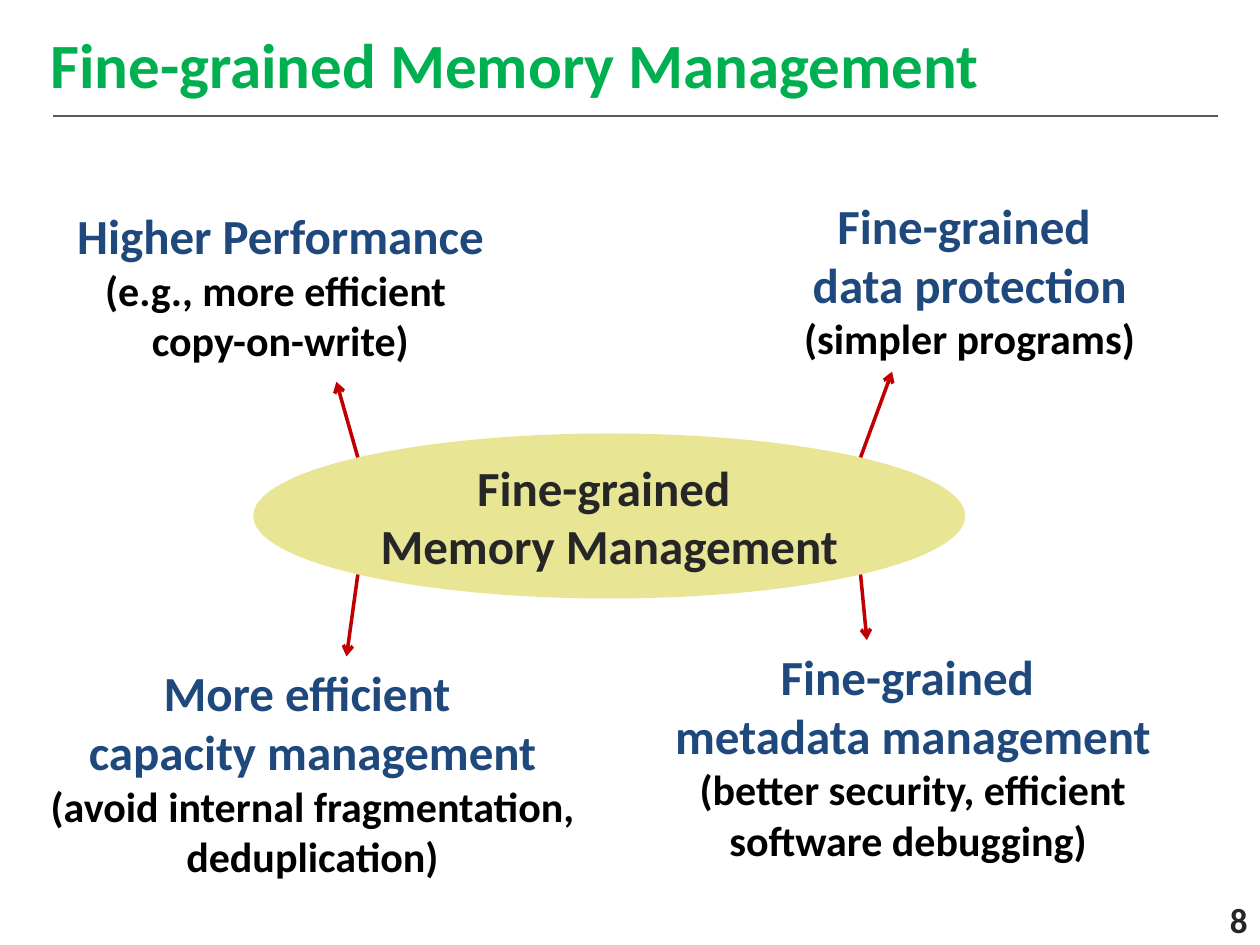
from pptx import Presentation
from pptx.dml.color import RGBColor
from pptx.enum.shapes import MSO_CONNECTOR, MSO_SHAPE
from pptx.enum.text import MSO_ANCHOR, PP_ALIGN
from pptx.oxml.ns import qn
from pptx.util import Inches, Pt
from lxml.etree import SubElement

THEME = {
    "font": "Calibri",
    "title": (36, "00B050"),
    "benefit": (28, "1F497D"),
    "detail": (24, "000000"),
    "hub": (28, "262626"),
    "number": (20, "262626"),
    "hub_fill": "E8E595",
    "rule": "595959",
    "arrow": "C00000",
}

# Grid of 100 columns by 75 rows
prs = Presentation()
prs.slide_width, prs.slide_height = Inches(10), Inches(7.5)
COL, ROW = prs.slide_width / 100, prs.slide_height / 75
slide = prs.slides.add_slide(prs.slide_layouts[6])


def grid(left, top, *size):
    """Turn columns and rows into slide lengths."""
    return [round(n * unit) for n, unit in zip((left, top, *size), (COL, ROW) * 2)]


def write(shape, lines, align, anchor):
    """Fill a shape with one paragraph for each (style, text) line."""
    frame = shape.text_frame
    frame.word_wrap, frame.vertical_anchor = True, anchor
    for i, (style, text) in enumerate(lines):
        paragraph = frame.add_paragraph() if i else frame.paragraphs[0]
        paragraph.alignment = align
        run = paragraph.add_run()
        run.text = text
        size, color = THEME[style]
        run.font.name, run.font.size, run.font.bold = THEME["font"], Pt(size), True
        run.font.color.rgb = RGBColor.from_string(color)


# Title and slide number
title = slide.shapes.add_textbox(*grid(0, 0, 100, 10))
title.text_frame.margin_left = round(4 * COL)
write(title, [("title", "Fine-grained Memory Management")], PP_ALIGN.LEFT, MSO_ANCHOR.MIDDLE)
number = slide.shapes.add_textbox(*grid(91.7, 71, 8.3, 4))
write(number, [("number", "8")], PP_ALIGN.RIGHT, MSO_ANCHOR.MIDDLE)

# Central idea
hub = slide.shapes.add_shape(MSO_SHAPE.OVAL, *grid(20.1, 34.4, 56.5, 13.1))
hub.shadow.inherit = False
hub.fill.solid()
hub.fill.fore_color.rgb = RGBColor.from_string(THEME["hub_fill"])
hub.line.fill.background()
write(hub, [("hub", "Fine-grained "), ("hub", "Memory Management")],
      PP_ALIGN.CENTER, MSO_ANCHOR.MIDDLE)

# Benefits around it: text box and its lines
benefits = [
    ((59.7, 15, 34.5, 14.5), [("benefit", "Fine-grained "), ("benefit", "data protection"),
                              ("detail", "(simpler programs)")]),
    ((2.9, 52.1, 43.8, 18.5), [("benefit", "More efficient "), ("benefit", "capacity management"),
                               ("detail", "(avoid internal fragmentation, deduplication)")]),
    ((51.6, 50.8, 41.7, 18.5), [("benefit", "Fine-grained "), ("benefit", "metadata management"),
                                ("detail", "(better security, efficient software debugging) ")]),
    ((5, 15.8, 34.5, 13.8), [("benefit", "Higher Performance"),
                             ("detail", "(e.g., more efficient "), ("detail", "copy-on-write)")]),
]
for box, lines in benefits:
    write(slide.shapes.add_textbox(*grid(*box)), lines, PP_ALIGN.CENTER, MSO_ANCHOR.TOP)

# Title rule, then arrows leaving the oval at four symmetric points
west, east, north, south = 28.4, 68.3, 36.3, 45.6
lines = [
    ((4.2, 9.2), (96.7, 9.2), "rule", 1.5),
    ((east, north), (70.8, 29.5), "arrow", 2),
    ((west, south), (27.5, 52.1), "arrow", 2),
    ((east, south), (68.8, 50.8), "arrow", 2),
    ((west, north), (26.7, 30.3), "arrow", 2),
]
for start, end, style, width in lines:
    line = slide.shapes.add_connector(MSO_CONNECTOR.STRAIGHT, *grid(*start), *grid(*end))
    line.line.width = Pt(width)
    line.line.color.rgb = RGBColor.from_string(THEME[style])
    if style == "arrow":
        SubElement(line.line._get_or_add_ln(), qn("a:tailEnd"), type="arrow")
    SubElement(line._element.spPr, qn("a:effectLst"))

prs.save("out.pptx")
